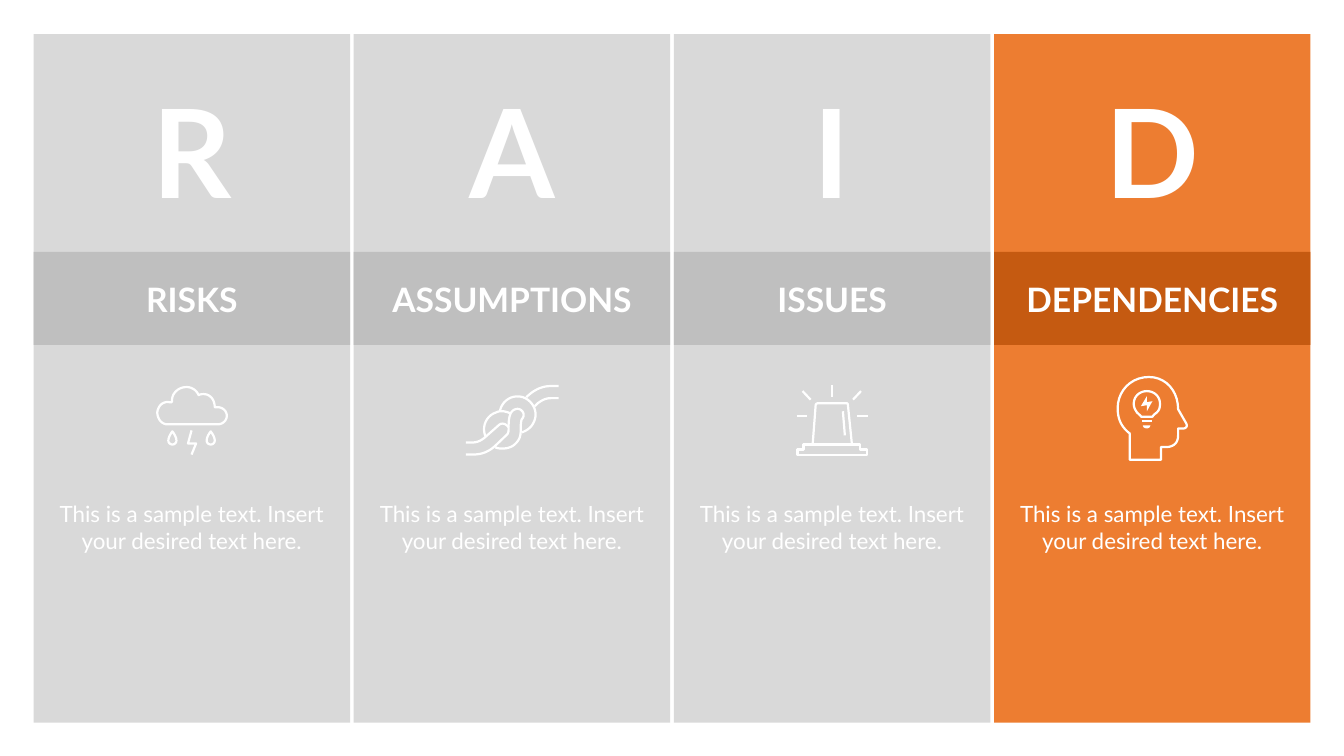
"""Build a RAID slide of four cards with the dependencies card highlighted."""
import pptx
import pptx.dml.color
import pptx.enum.shapes
import pptx.enum.text
import pptx.util

COLOURS = {
    "white": "FFFFFF",
    "card": "D9D9D9",
    "band": "BFBFBF",
    "active card": "ED7D31",
    "active band": "C55A11",
}
FIRST_CARD, CARD_PITCH, CARD_WIDTH = 2.5, 23.82, 23.55
ICON_LEFT, ICON_TOP = 8, 48
SAMPLE = "This is a sample text. Insert your desired text here."
NO_INSETS = {"margin_left": 0, "margin_top": 0, "margin_right": 0, "margin_bottom": 0}
MIDDLE = {"vertical_anchor": pptx.enum.text.MSO_ANCHOR.MIDDLE}
LETTER_FONT = {"size": pptx.util.Pt(88), "bold": True}
LABEL_FONT = {"size": pptx.util.Pt(24), "bold": True}
BODY_FONT = {"size": pptx.util.Pt(16)}


def drop(x):
    return [(x, 68), (x - 3, 72, x - 4, 75, x - 4, 77), (x - 4, 79.5, x - 2, 81, x, 81),
            (x + 2, 81, x + 4, 79.5, x + 4, 77), (x + 4, 75, x + 3, 72, x, 68)]


CLOUD = [
    [(76, 61), (26, 61), (20, 61, 16, 55, 16, 49), (17, 42, 22, 38, 28, 39), (30.5, 39),
     (30, 30, 37, 24, 45, 24), (50, 24, 55, 27, 57, 32), (59, 31, 61, 31, 62, 31),
     (68, 31, 73, 36, 73, 44), (74, 44, 75, 44, 76, 44), (81, 44, 85, 48, 85, 52.5),
     (85, 57, 81, 61, 76, 61)],
    [(50, 67), (46.5, 80), (54.5, 80), (50, 91)],
    drop(31),
    drop(69),
]
KNOT = [
    [(96.5, 23), (89, 23), (81, 23, 74, 26, 68, 31), (64.5, 34)],
    [(96.5, 35), (89, 35), (84, 35, 80, 37, 76, 40), (73, 43)],
    [(38.5, 47), (41, 37, 51, 31, 61, 34), (70, 37, 76, 47, 73, 56), (71, 63, 66, 67, 60, 69)],
    [(24, 73), (20, 63, 25, 52, 35, 49), (39, 47, 44, 48, 48.5, 50)],
    [(34, 84), (37, 85, 39, 85, 41, 85), (47, 85, 51, 83, 54, 80), (58, 76, 59, 72, 59, 67),
     (59, 63, 59, 59, 60, 56), (63, 53, 62, 49, 60, 47.5), (58, 45, 54, 45, 51, 47.5),
     (48, 50, 47, 56, 47, 62), (47, 66), (47, 68, 46.5, 70, 45.5, 71), (33, 83),
     (26, 89, 19, 91, 11, 91), (4.5, 91)],
    [(4.5, 79), (11, 79), (16, 79, 20, 77, 24, 73.5), (37, 62), (40, 59, 44, 60, 47, 64)],
]
SIREN = [
    [(16, 91.5), (16, 86), (22, 86), (22, 81), (78, 81), (78, 86), (85, 86), (85, 91.5), (16, 91.5)],
    [(31, 81), (34, 42), (34, 41, 35, 40, 37, 40), (64, 40), (66, 40, 66, 41, 66, 42), (70, 81)],
    [(61, 48), (63, 72)],
    [(50, 22), (50, 34)],
    [(15, 53), (25, 53)],
    [(75, 53), (86, 53)],
    [(21, 28), (29, 36.5)],
    [(71, 36.5), (79, 28)],
]
HEAD = [
    [(76, 46), (76, 28, 64, 14, 47, 14), (29, 14, 16, 28, 16, 45), (16, 56, 20, 64, 28, 70),
     (28, 96), (59, 96), (59, 83.5), (65, 83.5), (72, 83, 76, 79, 76, 72), (76, 65), (82, 65),
     (85, 64, 85, 62, 84, 60), (76, 46)],
    [(45, 28), (38, 28, 32, 33, 32, 40.5), (32, 45, 34, 47, 35, 49), (37, 51, 38.5, 52, 39.5, 53.5),
     (50.5, 53.5), (52, 51, 54, 50, 55, 49), (57, 47, 58, 45, 58, 40.5), (58, 33, 52, 28, 45, 28)],
    [(40, 58), (50.5, 58)],
]
BULB_SOLIDS = [
    [(41, 62), (48.5, 62), (48, 64, 47, 65, 45, 65), (43, 65, 41, 64, 41, 62)],
    [(45, 33), (39, 43), (45, 42), (45, 48), (50.5, 38), (45, 39), (45, 33)],
]
CARDS = [
    ("R", "RISKS", CLOUD, [], ""),
    ("A", "ASSUMPTIONS", KNOT, [], ""),
    ("I", "ISSUES", SIREN, [], ""),
    ("D", "DEPENDENCIES", HEAD, BULB_SOLIDS, "active "),
]


def apply(target, values):
    for name, value in values.items():
        setattr(target, name, value)


def flatten(stroke, steps=10):
    points = [stroke[0]]
    for segment in stroke[1:]:
        if len(segment) == 2:
            points.append(segment)
            continue
        curve = list(zip(points[-1] + segment, (points[-1] + segment)[1:]))[::2]
        for step in range(1, steps + 1):
            t = step / steps
            weights = ((1 - t) ** 3, 3 * t * (1 - t) ** 2, 3 * t ** 2 * (1 - t), t ** 3)
            points.append(tuple(sum(weight * point[axis] for weight, point in zip(weights, curve))
                                for axis in (0, 1)))
    return [(100 * x, 100 * y) for x, y in points]


class Deck:
    """Hold the style and current slide on a grid of 100 columns by 100 rows."""

    def __init__(self):
        self.presentation = pptx.Presentation()
        apply(self.presentation, {"slide_width": pptx.util.Inches(13.33),
                                  "slide_height": pptx.util.Inches(7.5)})
        self.font = "Lato"
        self.stroke_width = pptx.util.Pt(1.6)
        self.slide = self.presentation.slides.add_slide(self.presentation.slide_layouts[6])

    def colour(self, name):
        return pptx.dml.color.RGBColor.from_string(COLOURS[name])

    def place(self, column, row):
        return (round(column * self.presentation.slide_width / 100),
                round(row * self.presentation.slide_height / 100))

    def fill(self, shape, colour):
        shape.shadow.inherit = False
        shape.fill.solid()
        shape.fill.fore_color.rgb = self.colour(colour)
        shape.line.fill.background()

    def rectangle(self, column, row, width, height, colour):
        shape = self.slide.shapes.add_shape(
            pptx.enum.shapes.MSO_SHAPE.RECTANGLE, *self.place(column, row), *self.place(width, height))
        self.fill(shape, colour)

    def text(self, column, row, width, height, words, font, frame_format):
        shape = self.slide.shapes.add_textbox(*self.place(column, row), *self.place(width, height))
        apply(shape.text_frame, {"word_wrap": True, **frame_format})
        paragraph = shape.text_frame.paragraphs[0]
        paragraph.alignment = pptx.enum.text.PP_ALIGN.CENTER
        run = paragraph.add_run()
        run.text = words
        apply(run.font, {"name": self.font, **font})
        run.font.color.rgb = self.colour("white")

    def icon(self, column, row, strokes, solid=False):
        outlines = [flatten(stroke) for stroke in strokes]
        scale = self.presentation.slide_height / 75000
        builder = self.slide.shapes.build_freeform(*outlines[0][0], scale=scale)
        for outline in outlines:
            builder.move_to(*outline[0])
            builder.add_line_segments(outline[1:], close=outline[0] == outline[-1])
        shape = builder.convert_to_shape(*self.place(column, row))
        if solid:
            self.fill(shape, "white")
            return
        shape.shadow.inherit = False
        shape.fill.background()
        shape.line.color.rgb = self.colour("white")
        shape.line.width = self.stroke_width

    def card(self, index, letter, label, strokes, solids, state):
        left = FIRST_CARD + index * CARD_PITCH
        self.rectangle(left, 4.5, CARD_WIDTH, 91.1, state + "card")
        self.rectangle(left, 33.33, CARD_WIDTH, 12.3, state + "band")
        self.text(left + 1.8, 9.33, 19.95, 21.07, letter, LETTER_FONT, {})
        self.text(left + 1.95, 35.47, 19.65, 8.27, label, LABEL_FONT, {**NO_INSETS, **MIDDLE})
        self.text(left + 1.83, 66.13, 19.88, 24.8, SAMPLE, BODY_FONT, NO_INSETS)
        self.icon(left + ICON_LEFT, ICON_TOP, strokes)
        if solids:
            self.icon(left + ICON_LEFT, ICON_TOP, solids, solid=True)


def main():
    deck = Deck()
    for index, card in enumerate(CARDS):
        deck.card(index, *card)
    deck.presentation.save("out.pptx")


if __name__ == "__main__":
    main()
